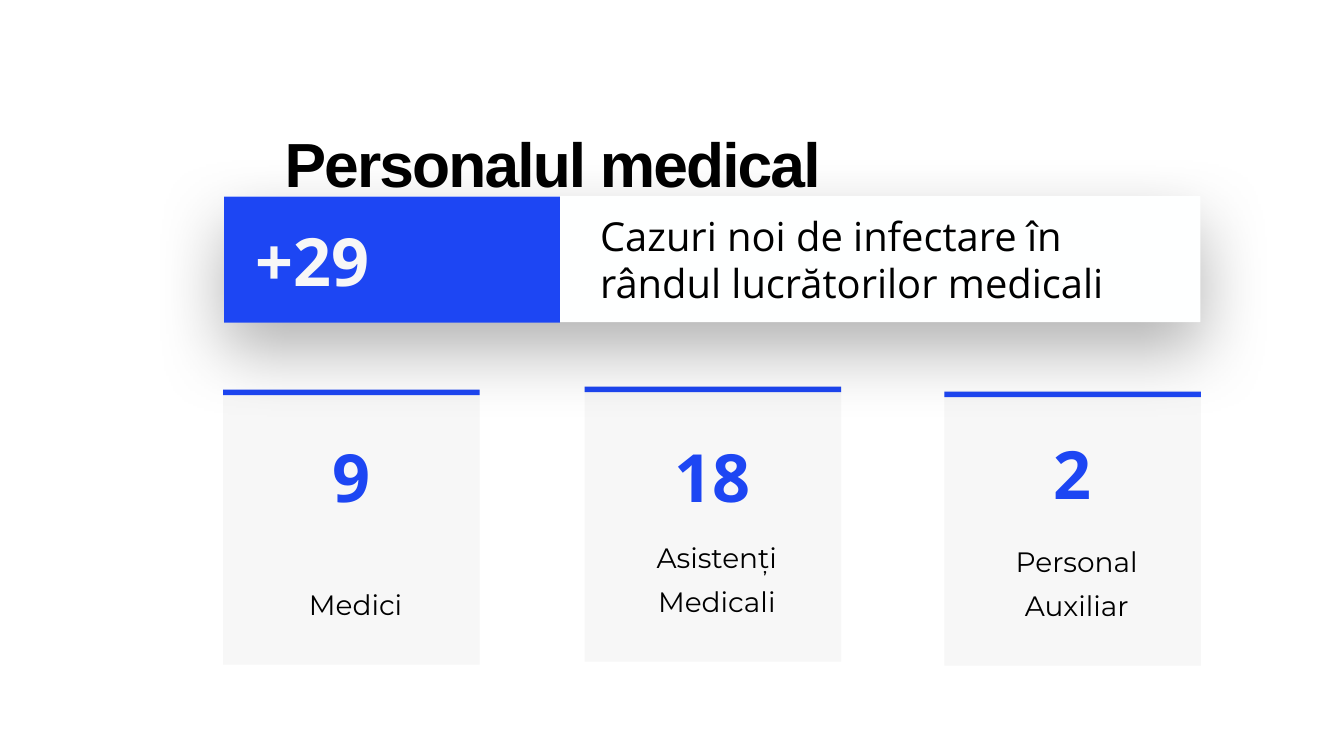
from lxml.etree import SubElement
from pptx import Presentation
from pptx.dml.color import RGBColor
from pptx.enum.shapes import MSO_SHAPE
from pptx.enum.text import MSO_ANCHOR, PP_ALIGN
from pptx.oxml.ns import qn
from pptx.util import Inches, Pt

BLUE, GREY, WHITE, BLACK = "1D46F3", "F7F7F7", "FEFFFF", "000000"
CARD_W, CARD_H, BAR_H = 5.09, 5.46, 0.11

# left, card top, bar top, number top, number, label
CARDS = [
    (4.43, 7.73, 7.73, 8.54, "9", "Medici"),
    (11.6, 7.67, 7.67, 8.54, "18", "Asistenți Medicali"),
    (18.74, 7.75, 7.77, 8.49, "2", "Personal Auxiliar"),
]


def rgb(color):
    return RGBColor.from_string(color)


def add_rect(shapes, x, y, w, h, color):
    sp = shapes.add_shape(MSO_SHAPE.RECTANGLE, *map(Inches, (x, y, w, h)))
    sp.shadow.inherit = False
    sp.fill.solid()
    sp.fill.fore_color.rgb = rgb(color)
    sp.line.fill.background()
    return sp


def add_soft_shadow(sp, blur, distance, opacity):
    """Cast a black shadow straight down; lengths in points, opacity in percent."""
    effects = sp._element.spPr.find(qn("a:effectLst"))
    shadow = SubElement(effects, qn("a:outerShdw"), blurRad=str(Pt(blur)),
                        dist=str(Pt(distance)), dir="5400000", rotWithShape="0")
    color = SubElement(shadow, qn("a:srgbClr"), val=BLACK)
    SubElement(color, qn("a:alpha"), val=str(opacity * 1000))


def set_text(sp, text, *, size, font, color=BLACK, bold=False, align=PP_ALIGN.LEFT,
             anchor=MSO_ANCHOR.MIDDLE, insets=(0.1, 0.1, 0.1, 0.1),
             line_spacing=None, before=None, tracking=None):
    tf = sp.text_frame
    tf.word_wrap = True
    tf.vertical_anchor = anchor
    tf.margin_left, tf.margin_top, tf.margin_right, tf.margin_bottom = map(Inches, insets)
    p = tf.paragraphs[0]
    p.alignment = align
    p.line_spacing = line_spacing
    if before is not None:
        p.space_before = Pt(before)
    r = p.add_run()
    r.text = text
    r.font.name, r.font.size, r.font.bold = font, Pt(size), bold
    r.font.color.rgb = rgb(color)
    if tracking is not None:
        r.font._element.set("spc", str(round(tracking * 100)))


def add_text(shapes, x, y, w, h, text, **fmt):
    sp = shapes.add_textbox(*map(Inches, (x, y, w, h)))
    set_text(sp, text, **fmt)


def add_number(shapes, x, y, w, text, **fmt):
    add_text(shapes, x, y, w, 1.8, text, size=95, font="Open Sans", bold=True, **fmt)


def add_card(s, x, top, bar_top, number_top, number, label):
    shapes = s.shapes.add_group_shape().shapes
    body = add_rect(shapes, x, top, CARD_W, CARD_H, GREY)
    set_text(body, label, size=40, font="Montserrat", align=PP_ALIGN.CENTER,
             anchor=MSO_ANCHOR.BOTTOM, insets=(0.55, 0.71, 0.39, 0.87),
             line_spacing=1.3, before=20)
    add_rect(shapes, x, bar_top, CARD_W, BAR_H, BLUE)
    add_number(shapes, x, number_top, CARD_W, number, color=BLUE, align=PP_ALIGN.CENTER)


def add_banner(s):
    shapes = s.shapes.add_group_shape().shapes
    panel = add_rect(shapes, 4.45, 3.89, 19.37, 2.5, WHITE)
    add_soft_shadow(panel, blur=100, distance=40, opacity=30)
    add_text(shapes, 11.81, 4.08, 11.76, 2.12,
             "Cazuri noi de infectare în rândul lucrătorilor medicali",
             size=57, font="Open Sans")
    add_rect(shapes, 4.45, 3.9, 6.66, 2.5, BLUE)
    add_number(shapes, 4.98, 4.25, 6.03, "+29", color=GREY)


def main():
    prs = Presentation()
    prs.slide_width, prs.slide_height = Inches(26.67), Inches(15)
    s = prs.slides.add_slide(prs.slide_layouts[6])
    for card in CARDS:
        add_card(s, *card)
    add_text(s.shapes, 4.46, 1.87, 13.01, 2.73, "Personalul medical", size=89,
             font="Arial", bold=True, align=PP_ALIGN.CENTER, tracking=-2.7,
             insets=(0.06, 0.06, 0.06, 0.06))
    add_banner(s)
    prs.save("out.pptx")


if __name__ == "__main__":
    main()
